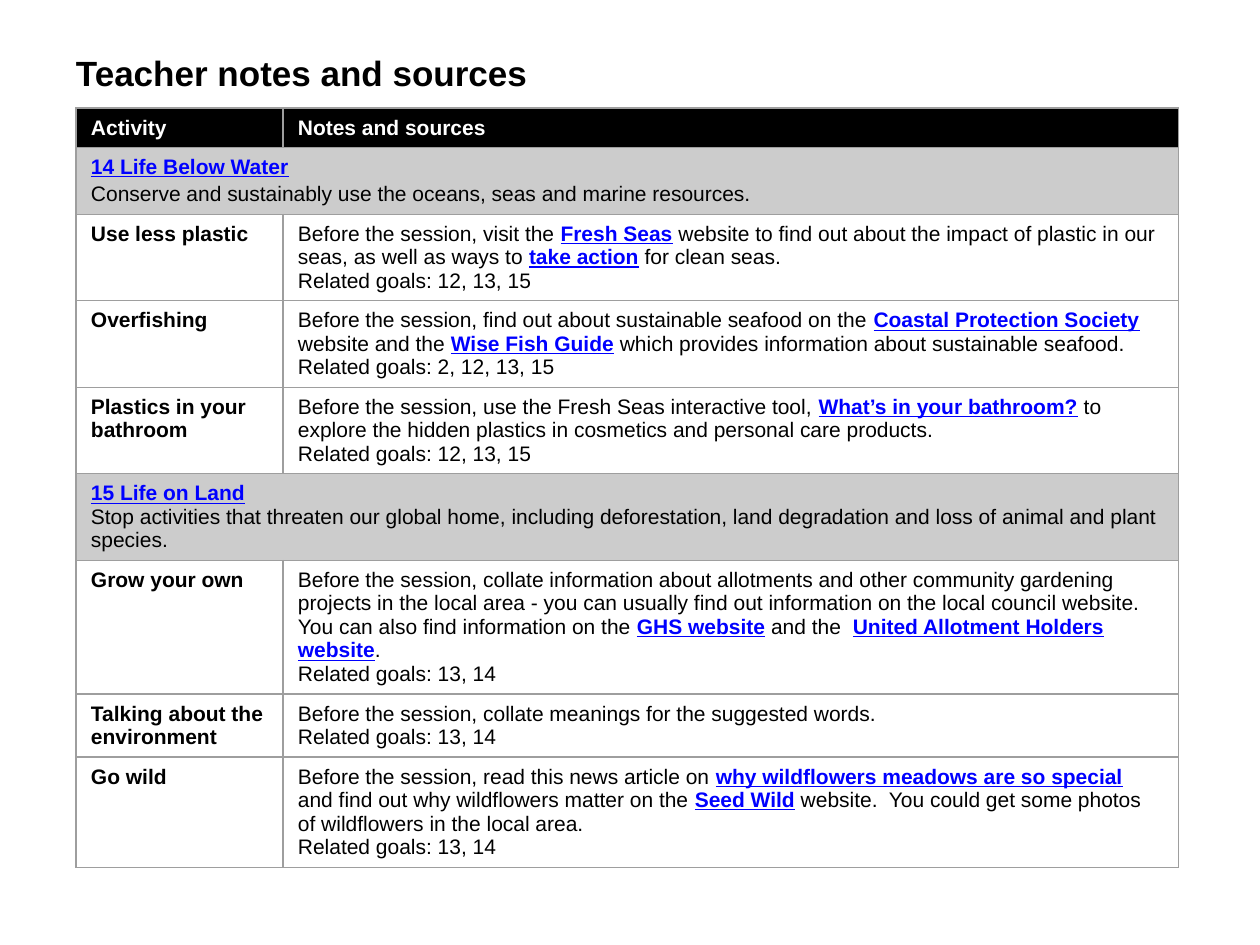
"""Build the teacher notes slide with its table of activities and sources."""
import dataclasses
import typing

import lxml.etree
import pptx
import pptx.dml.color
import pptx.enum.text
import pptx.oxml.ns
import pptx.util

EMU_PER_PX = 914400 // 126
COLORS = {
    "text": "000000",
    "link": "0000FF",
    "header": "000000",
    "header_text": "FFFFFF",
    "goal": "CCCCCC",
    "border": "9E9E9E",
}
COLUMN_WIDTHS = (207, 896)
LINK_MARK = "*"


@dataclasses.dataclass(frozen=True)
class Line:
    text: str
    bold: bool = False
    color: str = "text"
    spacing: float = 1.0


@dataclasses.dataclass(frozen=True)
class Row:
    height: int
    cells: tuple[tuple[Line, ...], ...]
    fill: str | None = None


def header(height: int, *labels: str) -> Row:
    cells = tuple((Line(label, True, "header_text"),) for label in labels)
    return Row(height, cells, "header")


def goal(height: int, name: str, summary: str, spacing: float = 1.0) -> Row:
    lines = (Line(f"*{name}*"), Line(summary, spacing=spacing))
    return Row(height, (lines,), "goal")


def activity(height: int, name: str, notes: str, goals: str) -> Row:
    lines = (Line(notes), Line(f"Related goals: {goals}"))
    return Row(height, ((Line(name, True),), lines))


ROWS = (
    header(39, "Activity", "Notes and sources"),
    goal(66, "14 Life Below Water",
         "Conserve and sustainably use the oceans, seas and marine resources.", 1.15),
    activity(86, "Use less plastic",
             "Before the session, visit the *Fresh Seas* website to find out about the impact "
             "of plastic in our seas, as well as ways to *take action* for clean seas.",
             "12, 13, 15"),
    activity(86, "Overfishing",
             "Before the session, find out about sustainable seafood on the "
             "*Coastal Protection Society* website and the *Wise Fish Guide* which provides "
             "information about sustainable seafood.",
             "2, 12, 13, 15"),
    activity(86, "Plastics in your bathroom",
             "Before the session, use the Fresh Seas interactive tool, "
             "*What’s in your bathroom?* to explore the hidden plastics in cosmetics and "
             "personal care products.",
             "12, 13, 15"),
    goal(86, "15 Life on Land",
         "Stop activities that threaten our global home, including deforestation, land "
         "degradation and loss of animal and plant species."),
    activity(133, "Grow your own",
             "Before the session, collate information about allotments and other community "
             "gardening projects in the local area - you can usually find out information on "
             "the local council website.  You can also find information on the "
             "*GHS website* and the  *United Allotment Holders website*.",
             "13, 14"),
    activity(62, "Talking about the environment",
             "Before the session, collate meanings for the suggested words.", "13, 14"),
    activity(110, "Go wild",
             "Before the session, read this news article on "
             "*why wildflowers meadows are so special* and find out why wildflowers matter on "
             "the *Seed Wild* website.  You could get some photos of wildflowers in the local "
             "area.",
             "13, 14"),
)


def px(length: int) -> pptx.util.Emu:
    return pptx.util.Emu(length * EMU_PER_PX)


def rgb(name: str) -> pptx.dml.color.RGBColor:
    return pptx.dml.color.RGBColor.from_string(COLORS[name])


def apply(target: typing.Any, values: dict[str, typing.Any]) -> None:
    for name, value in values.items():
        setattr(target, name, value)


def add_span(para: typing.Any, text: str, size: int, bold: bool, color: str,
             underline: bool = False) -> None:
    span = para.add_run()
    span.text = text
    apply(span.font, {"name": "Arial", "size": pptx.util.Pt(size), "bold": bold,
                      "underline": underline})
    span.font.color.rgb = rgb(color)


def write_lines(frame: typing.Any, lines: tuple[Line, ...], size: int) -> None:
    for index, line in enumerate(lines):
        para = frame.add_paragraph() if index else frame.paragraphs[0]
        apply(para, {"alignment": pptx.enum.text.PP_ALIGN.LEFT, "line_spacing": line.spacing,
                     "space_before": pptx.util.Pt(0), "space_after": pptx.util.Pt(0)})
        for position, text in enumerate(line.text.split(LINK_MARK)):
            is_link = position % 2 == 1
            if text:
                add_span(para, text, size, line.bold or is_link,
                         "link" if is_link else line.color, is_link)


def set_borders(cell: typing.Any) -> None:
    properties = cell._tc.get_or_add_tcPr()
    name = pptx.oxml.ns.qn
    for index, side in enumerate(("a:lnL", "a:lnR", "a:lnT", "a:lnB")):
        line = lxml.etree.Element(name(side), w=str(pptx.util.Pt(0.75)))
        fill = lxml.etree.SubElement(line, name("a:solidFill"))
        lxml.etree.SubElement(fill, name("a:srgbClr"), val=COLORS["border"])
        properties.insert(index, line)


def format_cell(cell: typing.Any, fill: str | None) -> None:
    apply(cell, {"margin_left": px(15), "margin_right": px(15), "margin_top": px(8),
                 "margin_bottom": px(8),
                 "vertical_anchor": pptx.enum.text.MSO_ANCHOR.TOP})
    if fill:
        cell.fill.solid()
        cell.fill.fore_color.rgb = rgb(fill)
    else:
        cell.fill.background()
    set_borders(cell)


def add_title(page: typing.Any, text: str) -> None:
    box = page.shapes.title
    apply(box, {"left": px(76), "top": px(45), "width": px(1119), "height": px(63)})
    frame = box.text_frame
    apply(frame, {"margin_left": 0, "margin_right": 0, "margin_top": 0, "margin_bottom": 0,
                  "word_wrap": True, "auto_size": pptx.enum.text.MSO_AUTO_SIZE.NONE,
                  "vertical_anchor": pptx.enum.text.MSO_ANCHOR.TOP})
    write_lines(frame, (Line(text, True, spacing=1.15),), 20)


def add_notes_table(page: typing.Any, rows: tuple[Row, ...]) -> None:
    table = page.shapes.add_table(
        len(rows), len(COLUMN_WIDTHS), px(76), px(108), px(sum(COLUMN_WIDTHS)),
        px(sum(row.height for row in rows))).table
    apply(table, {"first_row": False, "horz_banding": False})
    for column, width in zip(table.columns, COLUMN_WIDTHS):
        column.width = px(width)
    for index, row in enumerate(rows):
        table.rows[index].height = px(row.height)
        cells = [table.cell(index, column) for column in range(len(COLUMN_WIDTHS))]
        if len(row.cells) == 1:
            cells[0].merge(cells[-1])
        for cell in cells:
            format_cell(cell, row.fill)
        for cell, lines in zip(cells, row.cells):
            write_lines(cell.text_frame, lines, 12)


def main() -> None:
    deck = pptx.Presentation()
    apply(deck, {"slide_width": px(1260), "slide_height": px(945)})
    page = deck.slides.add_slide(deck.slide_layouts[5])
    add_title(page, "Teacher notes and sources")
    add_notes_table(page, ROWS)
    deck.save("out.pptx")


if __name__ == "__main__":
    main()
